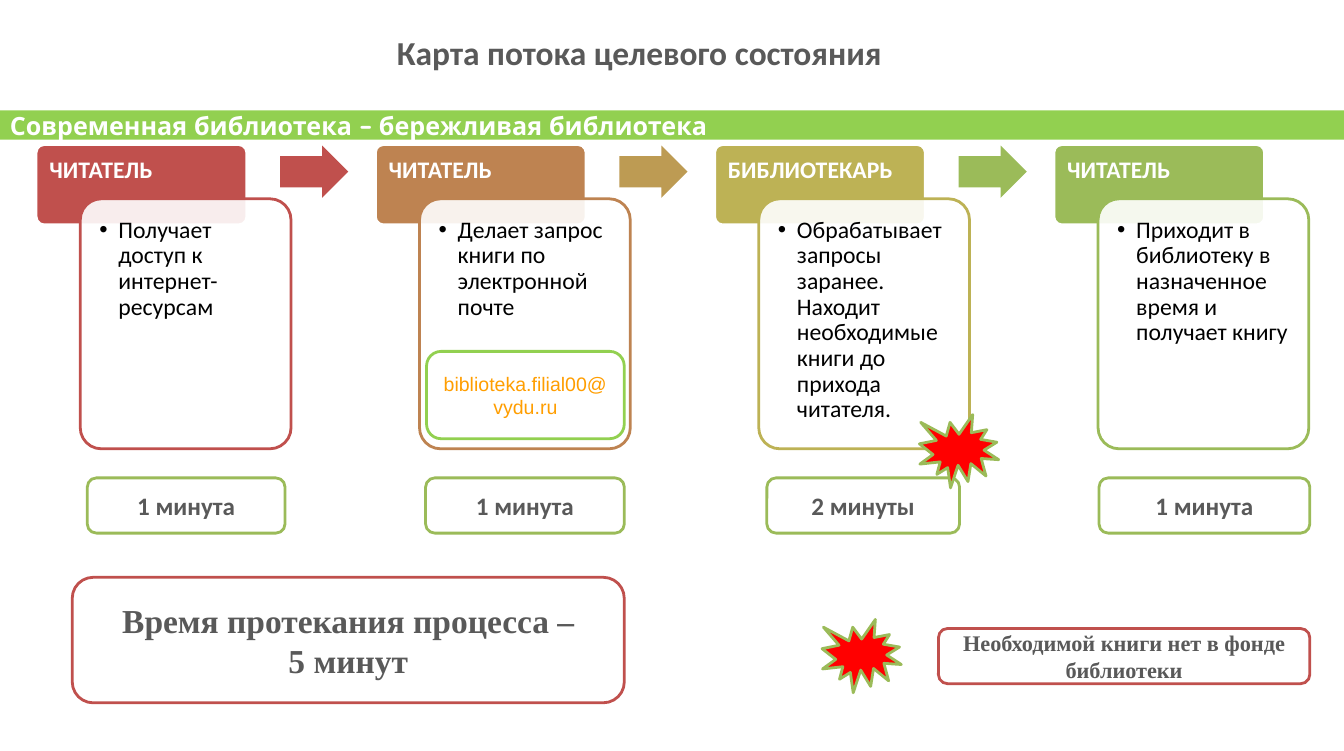
"""Build the target-state flow map of a lean library as one slide."""
from dataclasses import dataclass

from lxml import etree
from pptx import Presentation
from pptx.dml.color import RGBColor
from pptx.enum.shapes import MSO_SHAPE
from pptx.enum.text import MSO_ANCHOR, MSO_AUTO_SIZE, PP_ALIGN
from pptx.oxml.ns import qn
from pptx.util import Inches, Pt

RECT, ROUND = MSO_SHAPE.RECTANGLE, MSO_SHAPE.ROUNDED_RECTANGLE
ARROW, BURST = MSO_SHAPE.RIGHT_ARROW, MSO_SHAPE.EXPLOSION1
TOP, MIDDLE = MSO_ANCHOR.TOP, MSO_ANCHOR.MIDDLE
LEFT, CENTER = PP_ALIGN.LEFT, PP_ALIGN.CENTER
FIXED = MSO_AUTO_SIZE.NONE


@dataclass
class Theme:
    white: str = "FFFFFF"
    black: str = "000000"
    gray: str = "595959"
    red: str = "C0504D"
    brown: str = "BE8351"
    gold: str = "BD9B53"
    sand: str = "BDB255"
    green: str = "9BBB59"
    lime: str = "92D050"
    alarm: str = "FF0000"
    amber: str = "FF9E00"
    sans: str = "Calibri"
    serif: str = "Times New Roman"
    band: str = "Quicksand"
    mail: str = "Arial"
    big: int = 24
    mid: int = 18
    step: int = 17
    note: int = 16
    small: int = 14
    edge: int = 2


look = Theme()
WIDE, HIGH = 13.39, 7.48
START, PITCH = 0.36, 3.38
CARD = 2.1
HEAD_TOP, CARD_TOP, TIME_TOP = 1.44, 1.98, 4.76
TIME_HIGH = 0.55
PAD = 0.13

deck = Presentation()
deck.slide_width, deck.slide_height = Inches(WIDE), Inches(HIGH)
slide = deck.slides.add_slide(deck.slide_layouts[4])
shapes = slide.shapes


def draw(kind, at, fill=None, line=None):
    shape = shapes.add_shape(kind, *map(Inches, at))
    shape.shadow.inherit = False
    if fill:
        shape.fill.solid()
        shape.fill.fore_color.rgb = RGBColor.from_string(fill)
    else:
        shape.fill.background()
    if line:
        shape.line.color.rgb = RGBColor.from_string(line)
        shape.line.width = Pt(look.edge)
    else:
        shape.line.fill.background()
    return shape


def write(shape, text, size, color, face=look.sans, bold=True,
          align=CENTER, anchor=MIDDLE, pad=None, space=None):
    frame = shape.text_frame
    frame.text = text
    frame.word_wrap, frame.auto_size = True, FIXED
    frame.vertical_anchor = anchor
    if pad:
        frame.margin_left = frame.margin_right = Inches(pad)
        frame.margin_top = frame.margin_bottom = Inches(pad)
    for para in frame.paragraphs:
        para.alignment = align
        para.space_before = Pt(0)
        if space:
            para.line_spacing = space
        for run in para.runs:
            run.font.name, run.font.size = face, Pt(size)
            run.font.bold = bold
            run.font.color.rgb = RGBColor.from_string(color)


title, *lists = slide.placeholders
title.left, title.top, title.width, title.height = map(
    Inches, (1.37, 0.27, 10, 0.5))
write(title, "Карта потока целевого состояния", look.big, look.gray, anchor=TOP)

band = draw(RECT, (0, 1.1, WIDE, 0.29), look.lime)
write(band, "Современная библиотека – бережливая библиотека",
      look.mid, look.white, look.band, align=LEFT)

steps = [
    ("ЧИТАТЕЛЬ", "Получает доступ к интернет- ресурсам",
     look.red, look.red, "1 минута", 0.87, 1.97),
    ("ЧИТАТЕЛЬ", "Делает запрос книги по электронной почте",
     look.brown, look.gold, "1 минута", 4.24, 1.98),
    ("БИБЛИОТЕКАРЬ", "Обрабатывает запросы заранее. Находит необходимые "
     "книги до прихода читателя.",
     look.sand, look.green, "2 минуты", 7.64, 1.92),
    ("ЧИТАТЕЛЬ", "Приходит в библиотеку в назначенное время и получает книгу",
     look.green, None, "1 минута", 10.95, 2.1),
]

for col, (role, task, tone, next_tone, time, time_left, time_wide) in enumerate(steps):
    left = START + col * PITCH
    head = draw(ROUND, (left, HEAD_TOP, CARD, 0.8), tone, look.white)
    head.adjustments[0] = 0.1
    write(head, role, look.step, look.white, align=LEFT, anchor=TOP,
          pad=0.11, space=0.9)

    card = draw(ROUND, (left + 0.44, CARD_TOP, CARD, 2.49), look.white, tone)
    card.adjustments[0] = 0.1
    tint = card.fill._xPr.find(qn("a:solidFill"))[0]
    etree.SubElement(tint, qn("a:alpha"), val="90000")

    body = lists[col]
    body.left, body.top, body.width, body.height = map(
        Inches, (left + 0.5, CARD_TOP + 0.06, 1.98, 2.36))
    write(body, task, look.step, look.black, bold=False, align=LEFT,
          anchor=TOP, pad=PAD, space=0.9)
    props = body.text_frame.paragraphs[0]._p.get_or_add_pPr()
    props.set("marL", str(Inches(0.19)))
    props.set("indent", str(-Inches(0.19)))
    etree.SubElement(props, qn("a:buFont"), typeface="Arial")
    etree.SubElement(props, qn("a:buChar"), char="•")
    card._element.addnext(body._element)

    if next_tone:
        arrow = draw(ARROW, (left + 2.43, HEAD_TOP + 0.01, 0.68, 0.52), next_tone)
        arrow.adjustments[0] = 0.6

    clock = draw(ROUND, (time_left, TIME_TOP, time_wide, TIME_HIGH), line=look.green)
    write(clock, time, look.mid, look.gray)

total = draw(ROUND, (0.72, 5.75, 5.5, 1.25), line=look.red)
write(total, "Время протекания процесса –\n5 минут", look.big, look.gray, look.serif)

legend = draw(ROUND, (9.35, 6.26, 3.7, TIME_HIGH), line=look.red)
write(legend, "Необходимой книги нет в фонде библиотеки",
      look.note, look.gray, look.serif)

for left, top in ((9.16, 4.13), (8.19, 6.17)):
    draw(BURST, (left, top, 0.79, 0.73), look.alarm, look.green)

mail = draw(ROUND, (4.25, 3.5, 1.97, 0.87), line=look.lime)
write(mail, "biblioteka.filial00@vydu.ru", look.small, look.amber,
      look.mail, bold=False)

deck.save("out.pptx")
